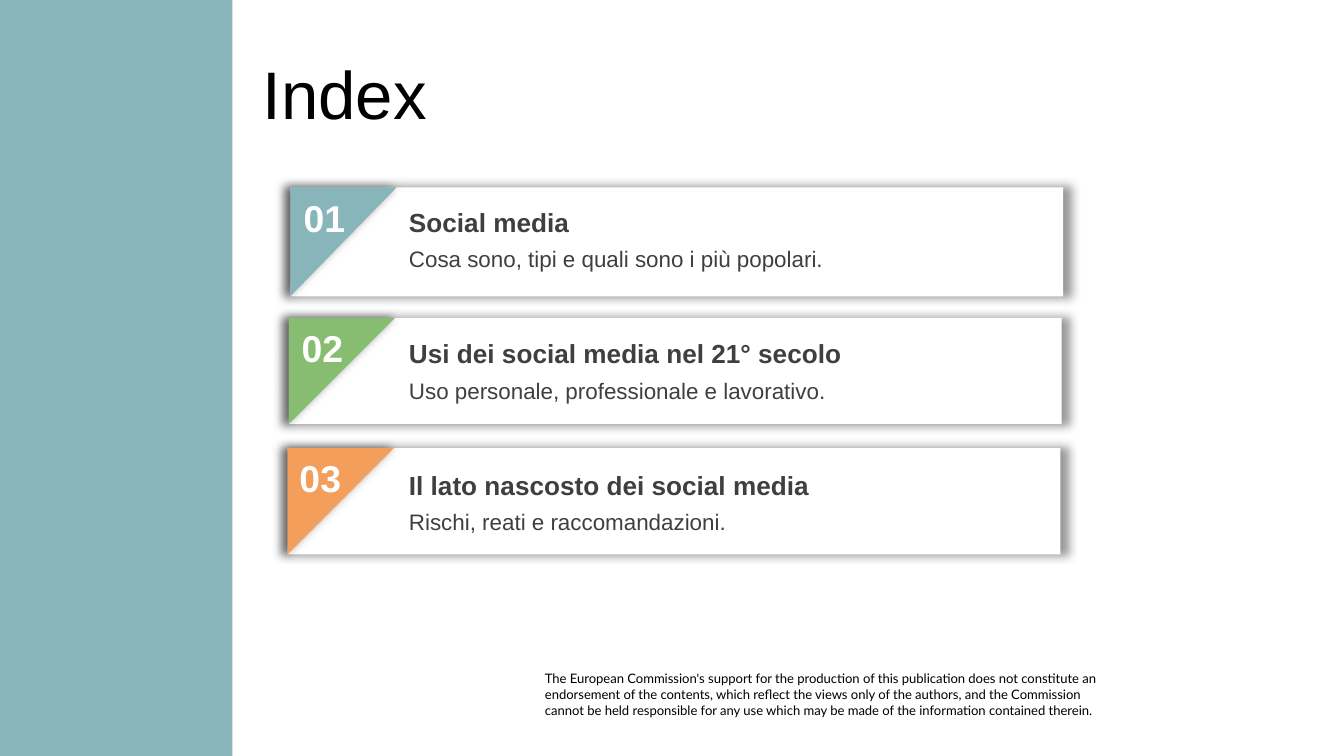
"""Builds an index slide with three numbered topic cards."""
from dataclasses import dataclass

from lxml.etree import SubElement
from pptx import Presentation
from pptx.dml.color import RGBColor
from pptx.enum.shapes import MSO_SHAPE
from pptx.enum.text import MSO_ANCHOR
from pptx.oxml.ns import qn
from pptx.util import Emu, Pt

EMU_PER_PX = 4572


def px(length):
    """Turn px, two hundred to the inch, into EMU."""
    return Emu(length * EMU_PER_PX)


@dataclass(frozen=True)
class Theme:
    """Colours, fonts and type sizes of the slide."""
    teal: str = "87B5BA"
    green: str = "86BD70"
    orange: str = "F39E5A"
    white: str = "FFFFFF"
    black: str = "000000"
    gray: str = "3F3F3F"
    font: str = "Arial"
    notice_font: str = "Lato"
    title_size: int = 36
    number_size: int = 20
    heading_size: int = 14
    body_size: int = 12
    notice_size: int = 7


class SlideBuilder:
    """Draws styled elements on the current slide."""

    def __init__(self, slide, theme):
        """Keep the slide and its style."""
        self.slide = slide
        self.theme = theme

    def block(self, shapes, kind, box, color):
        """Add a plain filled shape."""
        shape = shapes.add_shape(kind, *map(px, box))
        shape.shadow.inherit = False
        shape.fill.solid()
        shape.fill.fore_color.rgb = RGBColor.from_string(color)
        shape.line.fill.background()
        return shape

    def glow(self, shape):
        """Give a shape a soft shadow slightly larger than itself."""
        effects = shape._element.spPr.find(qn("a:effectLst"))
        shadow = SubElement(effects, qn("a:outerShdw"), blurRad=str(Pt(5)),
                            sx="102000", sy="102000", algn="ctr", rotWithShape="0")
        color = SubElement(shadow, qn("a:srgbClr"), val=self.theme.black)
        SubElement(color, qn("a:alpha"), val="40000")

    def text(self, shapes, box, words, size, color, bold=False, font=None,
             margins=(20, 10), anchor=MSO_ANCHOR.TOP):
        """Add a wrapped text box in one style."""
        frame = shapes.add_textbox(*map(px, box)).text_frame
        frame.word_wrap = True
        frame.vertical_anchor = anchor
        frame.margin_left = frame.margin_right = px(margins[0])
        frame.margin_top = frame.margin_bottom = px(margins[1])
        frame.text = words
        for paragraph in frame.paragraphs:
            for run in paragraph.runs:
                run.font.name = font or self.theme.font
                run.font.size = Pt(size)
                run.font.bold = bold
                run.font.color.rgb = RGBColor.from_string(color)

    def card(self, left, top, height, color):
        """Add a white card with a coloured corner."""
        shapes = self.slide.shapes.add_group_shape().shapes
        corner = 158
        panel = self.block(shapes, MSO_SHAPE.RECTANGLE, (left, top, 1150, height),
                           self.theme.white)
        shift = (height - corner) // 2
        triangle = self.block(shapes, MSO_SHAPE.RIGHT_TRIANGLE,
                              (left - shift, top + shift, height, corner), color)
        triangle.rotation = 90
        self.glow(panel)
        self.glow(triangle)

    def topic(self, left, top, heading, body):
        """Add the heading and description of a card."""
        theme = self.theme
        shapes = self.slide.shapes.add_group_shape().shapes
        self.text(shapes, (left, top, 960, 68), heading, theme.heading_size,
                  theme.gray, bold=True)
        self.text(shapes, (left, top + 58, 960, 100), body, theme.body_size, theme.gray)


def main():
    """Build and save the slide."""
    presentation = Presentation()
    presentation.slide_width, presentation.slide_height = px(2000), px(1125)
    slide = presentation.slides.add_slide(presentation.slide_layouts[6])
    theme = Theme()
    builder = SlideBuilder(slide, theme)

    notice = (
        "The European Commission's support for the production of this publication "
        "does not constitute an endorsement of the contents, which reflect the views "
        "only of the authors, and the Commission\n"
        "cannot be held responsible for any use which may be made of the information "
        "contained therein."
    )
    builder.text(slide.shapes, (811, 998, 834, 70), notice, theme.notice_size,
                 theme.black, font=theme.notice_font, margins=(0, 0))
    builder.block(slide.shapes, MSO_SHAPE.RECTANGLE, (0, 0, 346, 1125), theme.teal)
    builder.text(slide.shapes, (371, 75, 1440, 126), "Index", theme.title_size,
                 theme.black, anchor=MSO_ANCHOR.MIDDLE)

    topics = [
        ("Social media", "Cosa sono, tipi e quali sono i più popolari.", theme.teal, 162),
        ("Usi dei social media nel 21° secolo",
         "Uso personale, professionale e lavorativo.", theme.green, 158),
        ("Il lato nascosto dei social media",
         "Rischi, reati e raccomandazioni.", theme.orange, 158),
    ]
    for index, (_, _, color, height) in enumerate(topics):
        builder.card(432 - 2 * index, 279 + 194 * index, height, color)
    for index in range(len(topics)):
        builder.text(slide.shapes, (432 - 3 * index, 280 + 194 * index, 116, 88),
                     f"{index + 1:02}", theme.number_size, theme.white, bold=True)
    for index, (heading, body, _, _) in enumerate(topics):
        builder.topic(589, 297 + 196 * index, heading, body)

    presentation.save("out.pptx")


if __name__ == "__main__":
    main()
